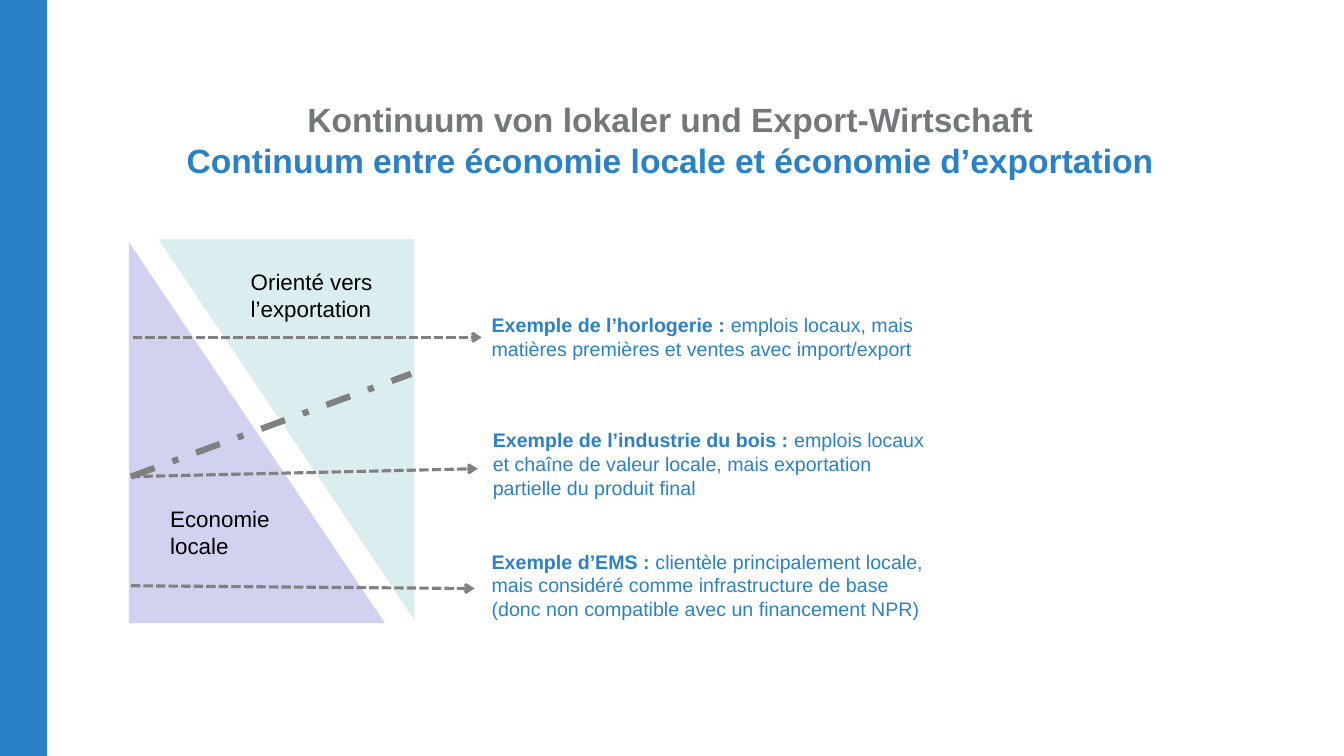
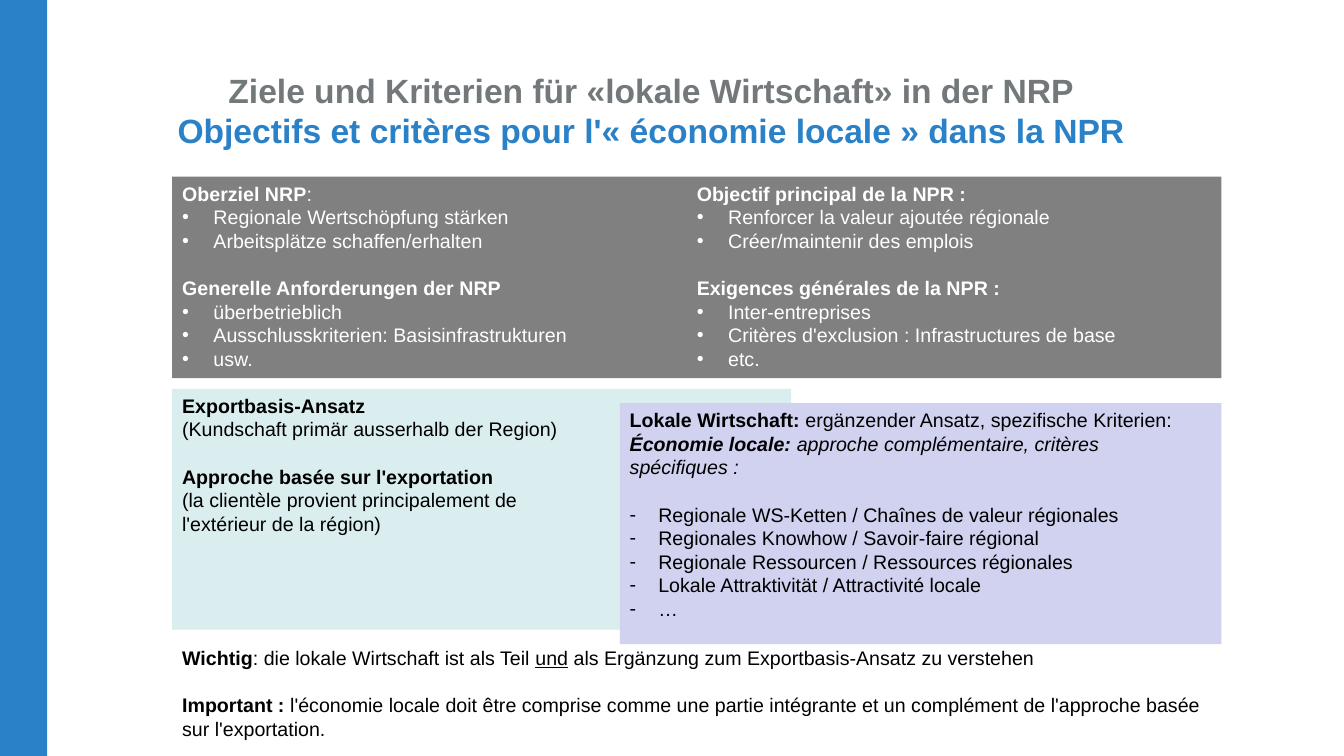
from typing import Any, NamedTuple
from lxml.etree import SubElement as Sub
from pptx import Presentation
from pptx.dml.color import RGBColor as Rgb
from pptx.enum.dml import MSO_LINE as Dash
from pptx.enum.shapes import MSO_CONNECTOR as Link, MSO_SHAPE as Form
from pptx.enum.text import MSO_ANCHOR as Anchor, PP_ALIGN as Align
from pptx.oxml.ns import qn
from pptx.util import Cm, Pt

FONT = "Arial"
HUES = {
    "bar": "2A81C6",
    "blue": "2A81C7",
    "slate": "73787B",
    "gray": "808080",
    "mint": "DAEDEF",
    "lilac": "D1D1F0",
    "black": "000000",
    "white": "FFFFFF",
}
BREAK = "\n"
INDENT = {"•": 0.79, "-": 0.72}
GAP = 17


class Box(NamedTuple):
    left: float
    top: float
    width: float
    height: float


class Bit(NamedTuple):
    text: str
    style: str = ""
    hue: str = ""


class Para(NamedTuple):
    bits: tuple[Bit, ...]
    mark: str = ""
    gap: bool = False


class Block(NamedTuple):
    box: Box
    paras: list[Para]
    hue: str = "black"
    size: int = 14
    fill: str = ""
    cols: int = 1


class Line(NamedTuple):
    start: tuple[float, float]
    end: tuple[float, float]
    width: float = 2.25
    dash: Any = Dash.SQUARE_DOT
    arrow: bool = True


def color(name: str) -> Rgb:
    return Rgb.from_string(HUES[name])


def plain(text: str) -> Para:
    return Para((Bit(text),))


def head(text: str, gap: bool = False) -> Para:
    return Para((Bit(text, "b"),), gap=gap)


def items(mark: str, *texts: str, gap: bool = False) -> list[Para]:
    return [Para((Bit(text),), mark, gap and not i) for i, text in enumerate(texts)]


def sample(lead: str, text: str) -> list[Para]:
    return [Para((Bit(lead, "b"), Bit(text)))]


def shape(slide: Any, form: Any, box: Box, fill: str) -> Any:
    item = slide.shapes.add_shape(form, *map(Cm, box))
    item.shadow.inherit = False
    item.fill.solid()
    item.fill.fore_color.rgb = color(fill)
    item.line.fill.background()
    return item


def write(frame: Any, paras: list[Para], size: int, hue: str, align: Any = Align.LEFT) -> None:
    frame.word_wrap = True
    for i, para in enumerate(paras):
        par = frame.add_paragraph() if i else frame.paragraphs[0]
        par.alignment = align
        if para.mark:
            props = par._p.get_or_add_pPr()
            inset = Cm(INDENT[para.mark])
            props.set("marL", str(inset))
            props.set("indent", str(-inset))
            Sub(props, qn("a:buFont"), typeface=FONT)
            Sub(props, qn("a:buChar"), char=para.mark)
        if para.gap:
            par.space_before = Pt(GAP)
        for bit in para.bits:
            if bit.text == BREAK:
                par.add_line_break()
                Sub(par._p[-1], qn("a:rPr"), sz=str(size * 100))
                continue
            run = par.add_run()
            run.text = bit.text
            font = run.font
            font.name, font.size = FONT, Pt(size)
            font.color.rgb = color(bit.hue or hue)
            font.bold = "b" in bit.style
            font.italic = "i" in bit.style
            font.underline = "u" in bit.style


def block(slide: Any, spec: Block) -> Any:
    if spec.fill:
        item = shape(slide, Form.RECTANGLE, spec.box, spec.fill)
    else:
        item = slide.shapes.add_textbox(*map(Cm, spec.box))
    frame = item.text_frame
    frame.vertical_anchor = Anchor.TOP
    if spec.cols > 1:
        body = frame._txBody.bodyPr
        body.set("numCol", str(spec.cols))
        body.set("spcCol", "0")
    write(frame, spec.paras, spec.size, spec.hue)
    return item


def draw(slide: Any, line: Line) -> Any:
    item = slide.shapes.add_connector(Link.STRAIGHT, *map(Cm, line.start + line.end))
    item.line.color.rgb = color("gray")
    item.line.width = Pt(line.width)
    item.line.dash_style = line.dash
    if line.arrow:
        Sub(item.line._get_or_add_ln(), qn("a:tailEnd"), type="arrow")
    Sub(item._element.spPr, qn("a:effectLst"))
    return item


def start(deck: Any, left: float, top: float, german: str, french: str) -> Any:
    slide = deck.slides.add_slide(deck.slide_layouts[6])
    shape(slide, Form.RECTANGLE, Box(0, 0, 1.19, 19.05), "bar")
    frame = slide.shapes.add_textbox(*map(Cm, (left, top, 28.8, 1.6))).text_frame
    frame.vertical_anchor = Anchor.MIDDLE
    bits = (Bit(german, "b", "slate"), Bit(BREAK), Bit(french, "b", "blue"))
    write(frame, [Para(bits)], 24, "slate", Align.CENTER)
    return slide


def range_slide(deck: Any) -> None:
    slide = start(
        deck, 2.49, 2.72,
        "Kontinuum von lokaler und Export-Wirtschaft",
        "Continuum entre économie locale et économie d’exportation",
    )
    for left, top, turn, fill in ((3.25, 6.1, 0, "lilac"), (3.99, 6.02, 180, "mint")):
        wedge = shape(slide, Form.ISOSCELES_TRIANGLE, Box(left, top, 6.45, 9.6), fill)
        wedge.adjustments[0] = 0
        wedge.rotation = turn
    for box, text in (
        (Box(6.07, 6.63, 4.62, 1.63), "Orienté vers l’exportation"),
        (Box(4.04, 12.6, 3.99, 1.63), "Economie locale"),
    ):
        block(slide, Block(box, [plain(text)], size=16))
    for line in (
        Line((3.3, 12.01), (12.04, 11.81)),
        Line((3.3, 14.76), (11.96, 14.83)),
        Line((3.3, 12.01), (10.36, 9.42), 4.5, Dash.DASH_DOT, False),
    ):
        draw(slide, line)
    watch = draw(slide, Line((3.35, 8.5), (12.14, 8.5)))
    cases = [
        block(slide, Block(box, sample(lead, text), "blue"))
        for box, lead, text in (
            (
                Box(12.14, 7.77, 12.01, 1.46),
                "Exemple de l’horlogerie : ",
                "emplois locaux, mais matières premières et ventes avec import/export",
            ),
            (
                Box(12.17, 10.67, 11.63, 2.06),
                "Exemple de l’industrie du bois : ",
                "emplois locaux et chaîne de valeur locale, mais exportation partielle du produit final",
            ),
            (
                Box(12.14, 13.72, 11.63, 2.06),
                "Exemple d’EMS : ",
                "clientèle principalement locale, mais considéré comme infrastructure de base "
                "(donc non compatible avec un financement NPR)",
            ),
        )
    ]
    watch.end_connect(cases[0], 1)


def goal_slide(deck: Any) -> None:
    slide = start(
        deck, 2.01, 1.98,
        "Ziele und Kriterien für «lokale Wirtschaft» in der NRP",
        "Objectifs et critères pour l'« économie locale » dans la NPR",
    )
    goals = [
        Para((Bit("Oberziel NRP", "b"), Bit(":"))),
        *items("•", "Regionale Wertschöpfung stärken", "Arbeitsplätze schaffen/erhalten"),
        head("Generelle Anforderungen der NRP", True),
        *items("•", "überbetrieblich", "Ausschlusskriterien: Basisinfrastrukturen", "usw."),
        head("Objectif principal de la NPR :"),
        *items("•", "Renforcer la valeur ajoutée régionale", "Créer/maintenir des emplois"),
        head("Exigences générales de la NPR :", True),
        *items("•", "Inter-entreprises", "Critères d'exclusion : Infrastructures de base", "etc."),
    ]
    export = [
        head("Exportbasis-Ansatz"),
        plain("(Kundschaft primär ausserhalb der Region)"),
        head("Approche basée sur l'exportation", True),
        Para((
            Bit("(la clientèle provient principalement de "),
            Bit(BREAK),
            Bit("l'extérieur de la région)"),
        )),
    ]
    local = [
        Para((
            Bit("Lokale Wirtschaft: ", "b"),
            Bit("ergänzender Ansatz, spezifische Kriterien:"),
            Bit(BREAK),
            Bit("Économie locale: ", "bi"),
            Bit("approche complémentaire, critères spécifiques :", "i"),
        )),
        *items(
            "-",
            "Regionale WS-Ketten / Chaînes de valeur régionales",
            "Regionales Knowhow / Savoir-faire régional",
            "Regionale Ressourcen / Ressources régionales",
            "Lokale Attraktivität / Attractivité locale",
            "…",
            gap=True,
        ),
    ]
    note = [
        Para((
            Bit("Wichtig", "b"),
            Bit(": die lokale Wirtschaft ist als Teil "),
            Bit("und", "u"),
            Bit(" als Ergänzung zum Exportbasis-Ansatz zu verstehen"),
        )),
        Para((
            Bit("Important : ", "b"),
            Bit(
                "l'économie locale doit être comprise comme une partie intégrante "
                "et un complément de l'approche basée sur l'exportation."
            ),
        ), gap=True),
    ]
    for spec in (
        Block(Box(4.34, 4.45, 26.44, 5.08), goals, "white", fill="gray", cols=2),
        Block(Box(4.34, 9.8, 15.6, 6.07), export, fill="mint"),
        Block(Box(15.62, 10.16, 15.16, 6.07), local, fill="lilac"),
        Block(Box(4.34, 16.15, 26.44, 1.6), note),
    ):
        block(slide, spec)


def main() -> None:
    deck = Presentation()
    deck.slide_width, deck.slide_height = Cm(33.87), Cm(19.05)
    range_slide(deck)
    goal_slide(deck)
    deck.save("out.pptx")


if __name__ == "__main__":
    main()
